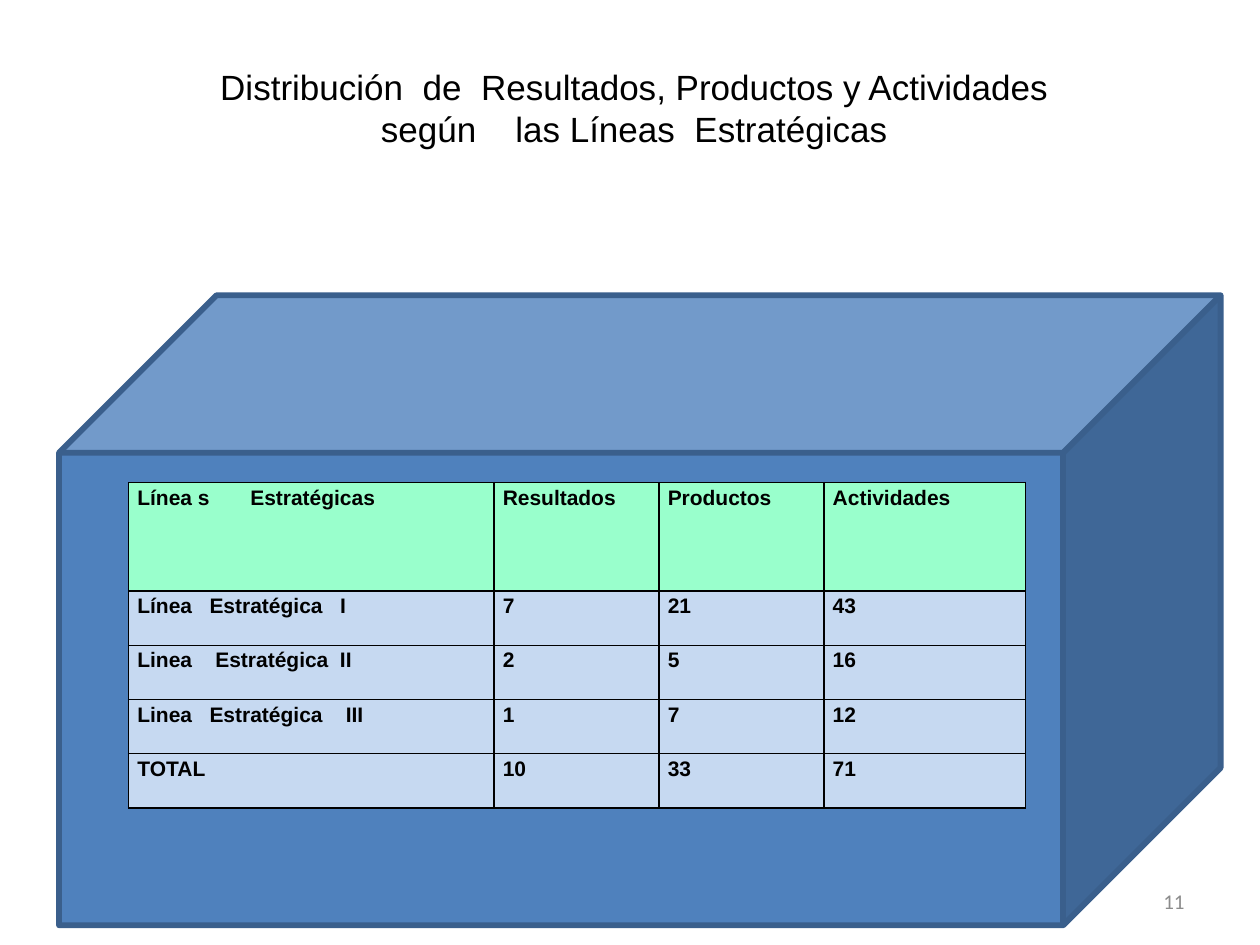
"""Slide with the distribution of results, products and activities by strategic line."""
import lxml.etree
import pptx
import pptx.dml.color
import pptx.enum.shapes
import pptx.enum.text
import pptx.oxml.ns
import pptx.util

Pt = pptx.util.Pt
COLORS = {
    "black": "000000",
    "number": "8C8C8C",
    "cube": "4F81BD",
    "edge": "3A5F8C",
    "header": "99FFCC",
    "body": "C6D9F1",
}
ROWS = [
    ["Línea s       Estratégicas", "Resultados", "Productos", "Actividades"],
    ["Línea   Estratégica   I", "7", "21", "43"],
    ["Linea    Estratégica  II", "2", "5", "16"],
    ["Linea   Estratégica    III", "1", "7", "12"],
    ["TOTAL", "10", "33", "71"],
]
COLUMN_WIDTHS = [208.8, 94.3, 94.3, 115.2]
ROW_HEIGHTS = [62] + [31] * 4


def rgb(name):
    return pptx.dml.color.RGBColor.from_string(COLORS[name])


def style(paragraph, font_name, size, color, bold=False):
    paragraph.font.name = font_name
    paragraph.font.size = Pt(size)
    paragraph.font.bold = bold
    paragraph.font.color.rgb = rgb(color)


deck = pptx.Presentation()
deck.slide_width, deck.slide_height = Pt(720), Pt(540)
slide = deck.slides.add_slide(deck.slide_layouts[6])

page_number = slide.shapes.add_textbox(Pt(516), Pt(500.5), Pt(168), Pt(28.75)).text_frame
page_number.word_wrap = True
page_number.vertical_anchor = pptx.enum.text.MSO_ANCHOR.MIDDLE
page_number.text = "11"
page_number.paragraphs[0].alignment = pptx.enum.text.PP_ALIGN.RIGHT
style(page_number.paragraphs[0], "Calibri", 12, "number")

cube = slide.shapes.add_shape(
    pptx.enum.shapes.MSO_SHAPE.CUBE, Pt(33.75), Pt(168.75), Pt(663.75), Pt(360))
cube.shadow.inherit = False
cube.fill.solid()
cube.fill.fore_color.rgb = rgb("cube")
cube.line.color.rgb = rgb("edge")
cube.line.width = Pt(3.35)

distribution = slide.shapes.add_table(
    len(ROWS), len(COLUMN_WIDTHS), Pt(73.5), Pt(275.75),
    Pt(sum(COLUMN_WIDTHS)), Pt(sum(ROW_HEIGHTS))).table
for column, width in zip(distribution.columns, COLUMN_WIDTHS):
    column.width = Pt(width)

for row_index, (labels, height) in enumerate(zip(ROWS, ROW_HEIGHTS)):
    distribution.rows[row_index].height = Pt(height)
    for column_index, label in enumerate(labels):
        cell = distribution.cell(row_index, column_index)
        cell.margin_left = cell.margin_right = Pt(5)
        cell.margin_top = cell.margin_bottom = 0
        cell.text = label
        paragraph = cell.text_frame.paragraphs[0]
        paragraph.line_spacing = 1.15
        style(paragraph, "Arial", 12, "black", bold=True)
        properties = cell._tc.get_or_add_tcPr()
        for side in ("a:lnL", "a:lnR", "a:lnT", "a:lnB"):
            border = lxml.etree.SubElement(
                properties, pptx.oxml.ns.qn(side), w=str(Pt(1)))
            border_fill = lxml.etree.SubElement(border, pptx.oxml.ns.qn("a:solidFill"))
            lxml.etree.SubElement(
                border_fill, pptx.oxml.ns.qn("a:srgbClr"), val=COLORS["black"])
        cell.fill.solid()
        cell.fill.fore_color.rgb = rgb("body" if row_index else "header")

title = slide.shapes.add_textbox(Pt(112.5), Pt(33.75), Pt(500), Pt(55.75)).text_frame
title.word_wrap = True
title.auto_size = pptx.enum.text.MSO_AUTO_SIZE.SHAPE_TO_FIT_TEXT
title.text = ("Distribución  de  Resultados, Productos y Actividades "
              "según    las Líneas  Estratégicas")
title.paragraphs[0].alignment = pptx.enum.text.PP_ALIGN.CENTER
style(title.paragraphs[0], "Arial", 20, "black")

deck.save("out.pptx")
